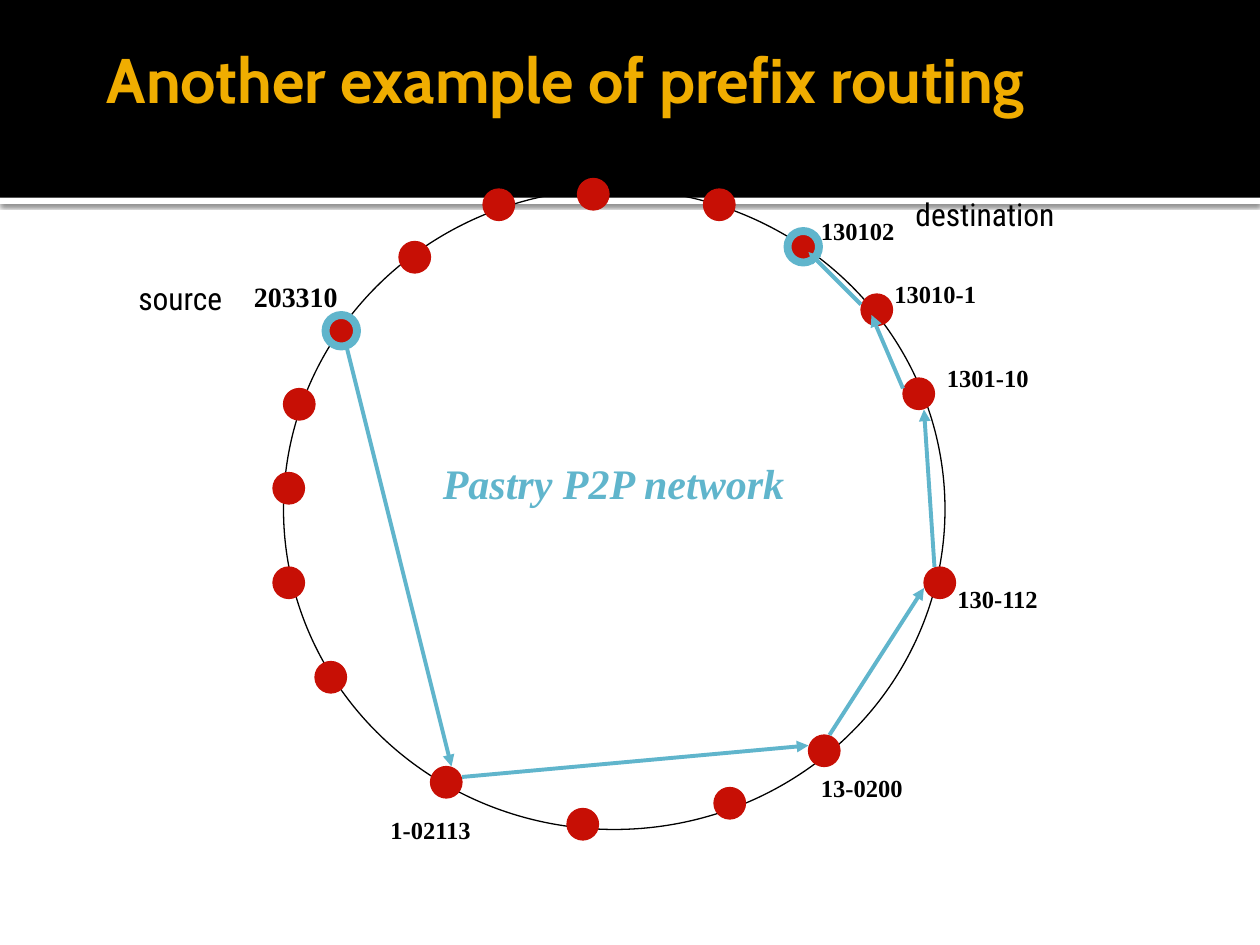
from typing import NamedTuple

from lxml.etree import SubElement
from pptx import Presentation
from pptx.dml.color import RGBColor
from pptx.enum.shapes import MSO_CONNECTOR, MSO_SHAPE
from pptx.enum.text import MSO_ANCHOR, MSO_AUTO_SIZE, PP_ALIGN
from pptx.oxml.ns import qn
from pptx.util import Pt

BLACK = RGBColor(0x00, 0x00, 0x00)
WHITE = RGBColor(0xFF, 0xFF, 0xFF)
GOLD = RGBColor(0xF0, 0xAD, 0x00)
RED = RGBColor(0xC7, 0x0F, 0x05)
BLUE = RGBColor(0x60, 0xB5, 0xCC)

NODE_SIZE = 18
SLIDE_WIDTH, SLIDE_HEIGHT = 720, 540

# Text formats
SERIF = {"name": "Times New Roman", "bold": True}
TITLE = {"name": "Cabin", "size": Pt(36), "bold": True}
SOURCE_KEY = {**SERIF, "size": Pt(16)}
NODE_KEY = {**SERIF, "size": Pt(14)}
ROLE = {"name": "Roboto Condensed", "size": Pt(18)}
NETWORK = {**SERIF, "size": Pt(24), "italic": True}


class Box(NamedTuple):
    left: float
    top: float
    width: float
    height: float


class Label(NamedTuple):
    text: str
    box: Box
    font: dict
    color: RGBColor = BLACK


class Node(NamedTuple):
    left: float
    top: float
    endpoint: bool = False


class Hop(NamedTuple):
    start_x: float
    start_y: float
    end_x: float
    end_y: float


KEY_LABELS = [
    Label("203310", Box(138, 156, 63, 26.6), SOURCE_KEY),
    *(Label(text, Box(left, top, width, 24), NODE_KEY)
      for text, left, top, width in [
          ("1-02113", 216, 462, 61), ("13-0200", 462, 438, 61),
          ("130-112", 540, 330, 61), ("1301-10", 534, 204, 61),
          ("13010-1", 504, 156, 61), ("130102", 462, 120, 57)]),
]
CAPTIONS = [
    Label("source", Box(72, 156, 66, 29), ROLE),
    Label("destination", Box(516, 108, 99, 29), ROLE),
    Label("Pastry P2P network", Box(246, 258, 210, 36), NETWORK, BLUE),
]
NODES = [
    Node(186, 180, True), Node(246, 438), Node(462, 420), Node(528, 324),
    Node(516, 216), Node(450, 132, True), Node(492, 168), Node(162, 222),
    Node(156, 270), Node(156, 324), Node(180, 378), Node(324, 462),
    Node(408, 450), Node(402, 108), Node(330, 102), Node(276, 108),
    Node(228, 138),
]
HOPS = [
    Hop(198, 198, 258, 438), Hop(264, 444, 462, 426), Hop(474, 420, 528, 336),
    Hop(534, 324, 528, 234), Hop(516, 222, 498, 180), Hop(492, 174, 462, 144),
]


def add_shape(slide, kind: MSO_SHAPE, box: Box, fill: RGBColor | None = None,
              line: RGBColor | None = None, line_width: float = 0.75):
    shape = slide.shapes.add_shape(kind, *map(Pt, box))
    shape.shadow.inherit = False
    if fill is None:
        shape.fill.background()
    else:
        shape.fill.solid()
        shape.fill.fore_color.rgb = fill
    if line is None:
        shape.line.fill.background()
    else:
        shape.line.color.rgb = line
        shape.line.width = Pt(line_width)
    return shape


def add_strip_shadow(shape) -> None:
    effects = shape._element.spPr.find(qn("a:effectLst"))
    shadow = SubElement(effects, qn("a:outerShdw"), blurRad=str(Pt(2.5)),
                        dist=str(Pt(0.8)), dir="5400000", rotWithShape="0")
    color = SubElement(shadow, qn("a:srgbClr"), val=str(BLACK))
    SubElement(color, qn("a:alpha"), val="60000")


def add_label(slide, label: Label, frame_format: dict) -> None:
    frame = slide.shapes.add_textbox(*map(Pt, label.box)).text_frame
    for name, value in frame_format.items():
        setattr(frame, name, value)
    paragraph = frame.paragraphs[0]
    paragraph.alignment = PP_ALIGN.LEFT
    run = paragraph.add_run()
    run.text = label.text
    for name, value in label.font.items():
        setattr(run.font, name, value)
    run.font.color.rgb = label.color


def add_node(slide, node: Node) -> None:
    add_shape(slide, MSO_SHAPE.OVAL,
              Box(node.left, node.top, NODE_SIZE, NODE_SIZE), RED,
              BLUE if node.endpoint else RED, 4.5 if node.endpoint else 0.75)


def add_hop(slide, hop: Hop) -> None:
    arrow = slide.shapes.add_connector(MSO_CONNECTOR.STRAIGHT, *map(Pt, hop))
    arrow.line.color.rgb = BLUE
    arrow.line.width = Pt(2.25)
    SubElement(arrow.line._get_or_add_ln(), qn("a:tailEnd"), type="triangle")
    SubElement(arrow._element.spPr, qn("a:effectLst"))


def main() -> None:
    presentation = Presentation()
    presentation.slide_width = Pt(SLIDE_WIDTH)
    presentation.slide_height = Pt(SLIDE_HEIGHT)
    slide = presentation.slides.add_slide(presentation.slide_layouts[6])
    label_frame = {"word_wrap": False,
                   "auto_size": MSO_AUTO_SIZE.SHAPE_TO_FIT_TEXT}
    title_frame = {"word_wrap": True, "vertical_anchor": MSO_ANCHOR.MIDDLE,
                   "margin_left": Pt(7.2), "margin_right": Pt(3.6)}

    # Header band and title
    strip = add_shape(slide, MSO_SHAPE.RECTANGLE,
                      Box(0, 113, SLIDE_WIDTH, 3.6), WHITE)
    add_strip_shadow(strip)
    add_shape(slide, MSO_SHAPE.RECTANGLE, Box(0, 0, SLIDE_WIDTH, 113), BLACK)
    add_label(slide, Label("Another example of prefix routing",
                           Box(54, 0, 612, 90), TITLE, GOLD), title_frame)

    # Ring with its keys and nodes
    add_shape(slide, MSO_SHAPE.OVAL, Box(162, 108, 378, 366), line=BLACK)
    for label in KEY_LABELS:
        add_label(slide, label, label_frame)
    for node in NODES:
        add_node(slide, node)

    # Route from source to destination
    for hop in HOPS:
        add_hop(slide, hop)
    for caption in CAPTIONS:
        add_label(slide, caption, label_frame)

    presentation.save("out.pptx")


if __name__ == "__main__":
    main()
